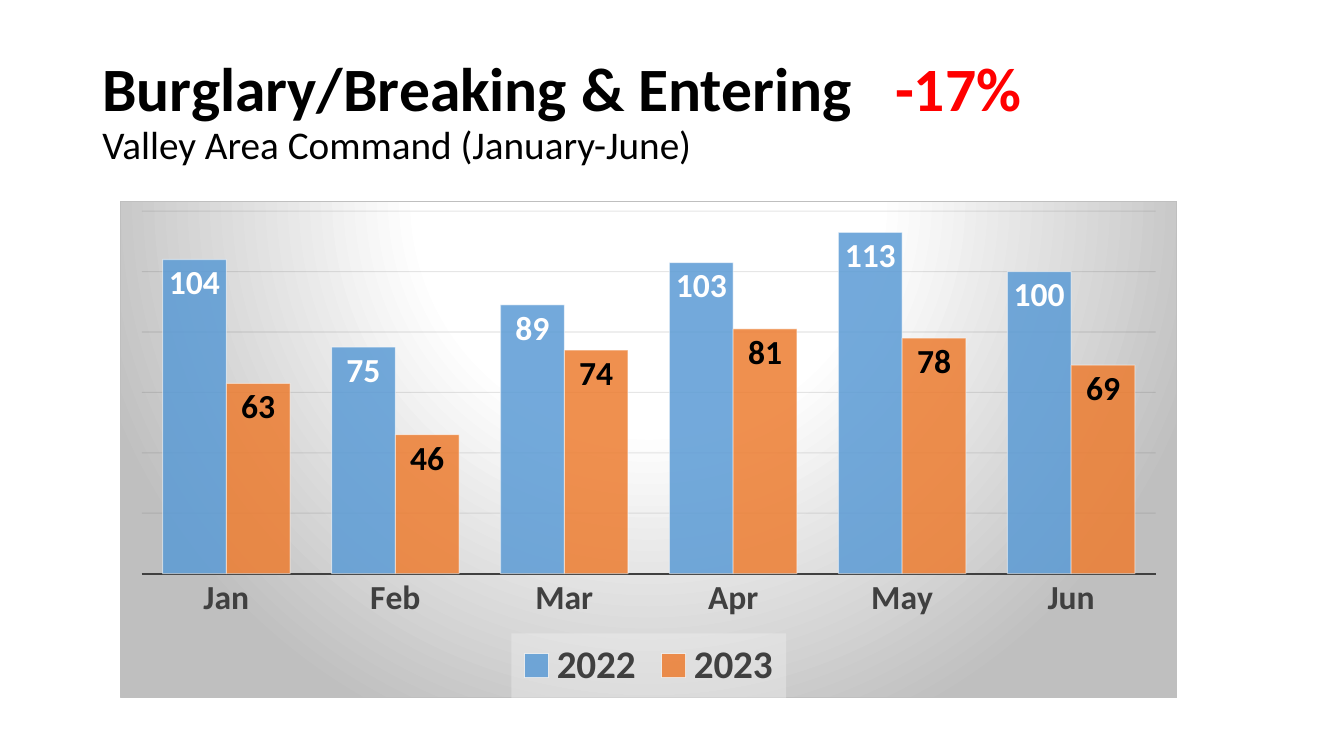
from dataclasses import dataclass

from lxml.etree import SubElement
from pptx import Presentation
from pptx.chart.chart import Chart
from pptx.chart.data import CategoryChartData
from pptx.chart.series import BarSeries
from pptx.dml.color import RGBColor
from pptx.dml.fill import FillFormat
from pptx.enum.chart import XL_CHART_TYPE, XL_LABEL_POSITION, XL_LEGEND_POSITION, XL_TICK_MARK
from pptx.enum.text import MSO_ANCHOR
from pptx.oxml import parse_xml
from pptx.oxml.ns import nsdecls, qn
from pptx.slide import Slide
from pptx.util import Cm, Pt


@dataclass(frozen=True)
class Theme:
    font: str = "Calibri"
    black: str = "000000"
    white: str = "FFFFFF"
    red: str = "FF0000"
    blue: str = "5B9BD5"
    orange: str = "ED7D31"
    label_gray: str = "404040"
    edge_gray: str = "BFBFBF"
    grid: str = "0D0D0D"
    legend_fill: str = "F2F2F2"
    headline_size: int = 44
    subtitle_size: int = 28
    legend_size: int = 28
    label_size: int = 24
    chart_size: int = 10


@dataclass(frozen=True)
class HeadingPart:
    text: str
    size: int
    color: str
    bold: bool
    tracking: int = 0
    starts_line: bool = False


@dataclass(frozen=True)
class YearCount:
    year: str
    incidents: tuple[int, ...]
    color: str
    label_color: str


THEME = Theme()
MONTHS = ("Jan", "Feb", "Mar", "Apr", "May", "Jun")
HEADING = (
    HeadingPart("Burglary/Breaking & Entering", THEME.headline_size, THEME.black, True),
    HeadingPart(" ", THEME.headline_size, THEME.black, True, tracking=20),
    HeadingPart("-17%", THEME.headline_size, THEME.red, True),
    HeadingPart("Valley Area Command (January-June)", THEME.subtitle_size, THEME.black, False,
                starts_line=True),
)
YEARS = (
    YearCount("2022", (104, 75, 89, 103, 113, 100), THEME.blue, THEME.white),
    YearCount("2023", (63, 46, 74, 81, 78, 69), THEME.orange, THEME.black),
)


def style_font(font, size: int, color: str, bold: bool) -> None:
    font.name = THEME.font
    font.size = Pt(size)
    font.bold = bold
    font.color.rgb = RGBColor.from_string(color)


def fill_solid(fill: FillFormat, color: str, owner, opacity: int) -> None:
    fill.solid()
    fill.fore_color.rgb = RGBColor.from_string(color)
    tint = owner.find(f".//{qn('a:solidFill')}/{qn('a:srgbClr')}")
    SubElement(tint, qn("a:alpha")).set("val", str(opacity * 1000))


def place(part, index: int, x: float, y: float, w: float, h: float, inner: bool = False) -> None:
    for previous in part.findall(qn("c:layout")):
        part.remove(previous)
    target = '<c:layoutTarget val="inner"/>' if inner else ""
    part.insert(index, parse_xml(
        f'<c:layout {nsdecls("c")}><c:manualLayout>{target}'
        '<c:xMode val="edge"/><c:yMode val="edge"/>'
        f'<c:x val="{x}"/><c:y val="{y}"/><c:w val="{w}"/><c:h val="{h}"/>'
        '</c:manualLayout></c:layout>'))


def add_heading(slide: Slide) -> None:
    heading = slide.shapes.add_textbox(Cm(2.33), Cm(1.01), Cm(29.21), Cm(3.68)).text_frame
    heading.word_wrap = True
    heading.vertical_anchor = MSO_ANCHOR.MIDDLE
    paragraph = heading.paragraphs[0]
    paragraph.line_spacing = 0.9
    for part in HEADING:
        if part.starts_line:
            paragraph.add_line_break()
        run = paragraph.add_run()
        run.text = part.text
        style_font(run.font, part.size, part.color, part.bold)
        if part.tracking:
            run.font._element.set("spc", str(part.tracking * 100))


def style_year(series: BarSeries, count: YearCount) -> None:
    fill_solid(series.format.fill, count.color, series._element, 85)
    outline = series.format.line
    outline.width = Pt(0.75)
    fill_solid(outline.fill, THEME.white, outline._get_or_add_ln(), 50)
    labels = series.data_labels
    labels.show_value = True
    labels.position = XL_LABEL_POSITION.INSIDE_END
    style_font(labels.font, THEME.label_size, count.label_color, True)


def style_axes(chart: Chart) -> None:
    months = chart.category_axis
    months.major_tick_mark = XL_TICK_MARK.NONE
    months.minor_tick_mark = XL_TICK_MARK.NONE
    style_font(months.tick_labels.font, THEME.label_size, THEME.label_gray, True)
    months.format.line.width = Pt(1.5)
    months.format.line.color.rgb = RGBColor.from_string(THEME.label_gray)
    incidents = chart.value_axis
    incidents.minimum_scale = 0
    incidents.maximum_scale = 120
    incidents.major_unit = 20
    incidents.visible = False
    gridline = incidents.major_gridlines.format.line
    gridline.width = Pt(0.75)
    fill_solid(gridline.fill, THEME.grid, gridline._get_or_add_ln(), 10)


def style_legend(chart: Chart) -> None:
    chart.has_legend = True
    legend = chart.legend
    legend.position = XL_LEGEND_POSITION.BOTTOM
    legend.include_in_layout = False
    style_font(legend.font, THEME.legend_size, THEME.label_gray, True)
    place(legend._element, 1, 0.37, 0.87, 0.26, 0.13)
    legend._element.find(qn("c:overlay")).addnext(parse_xml(
        f'<c:spPr {nsdecls("c", "a")}><a:solidFill><a:srgbClr val="{THEME.legend_fill}">'
        '<a:alpha val="39000"/></a:srgbClr></a:solidFill></c:spPr>'))


def style_background(chart: Chart) -> None:
    stops = "".join(
        f'<a:gs pos="{position * 1000}"><a:srgbClr val="{color}"/></a:gs>'
        for position, color in ((0, THEME.white), (39, THEME.white), (100, THEME.edge_gray)))
    chart._chartSpace.find(qn("c:chart")).addnext(parse_xml(
        f'<c:spPr {nsdecls("c", "a")}><a:gradFill><a:gsLst>{stops}</a:gsLst>'
        '<a:path path="circle"><a:fillToRect l="50000" t="-80000" r="50000" b="180000"/>'
        f'</a:path></a:gradFill><a:ln w="{Pt(0.75)}"><a:solidFill>'
        f'<a:srgbClr val="{THEME.edge_gray}"/></a:solidFill></a:ln></c:spPr>'))


def add_burglary_chart(slide: Slide) -> None:
    counts = CategoryChartData()
    counts.categories = MONTHS
    for count in YEARS:
        counts.add_series(count.year, count.incidents)
    chart = slide.shapes.add_chart(
        XL_CHART_TYPE.COLUMN_CLUSTERED, Cm(3.03), Cm(5.06), Cm(26.64), Cm(12.54), counts).chart
    chart.has_title = False
    style_font(chart.font, THEME.chart_size, THEME.black, False)
    columns = chart.plots[0]
    columns.gap_width = 65
    columns.overlap = 0
    columns.vary_by_categories = False
    for series, count in zip(columns.series, YEARS):
        style_year(series, count)
    style_axes(chart)
    style_legend(chart)
    place(chart._chartSpace.find(f".//{qn('c:plotArea')}"), 0, 0.02, 0.02, 0.96, 0.73, inner=True)
    style_background(chart)


def main() -> None:
    presentation = Presentation()
    presentation.slide_width = Cm(33.87)
    presentation.slide_height = Cm(19.05)
    slide = presentation.slides.add_slide(presentation.slide_layouts[6])
    add_heading(slide)
    add_burglary_chart(slide)
    presentation.save("out.pptx")


if __name__ == "__main__":
    main()
